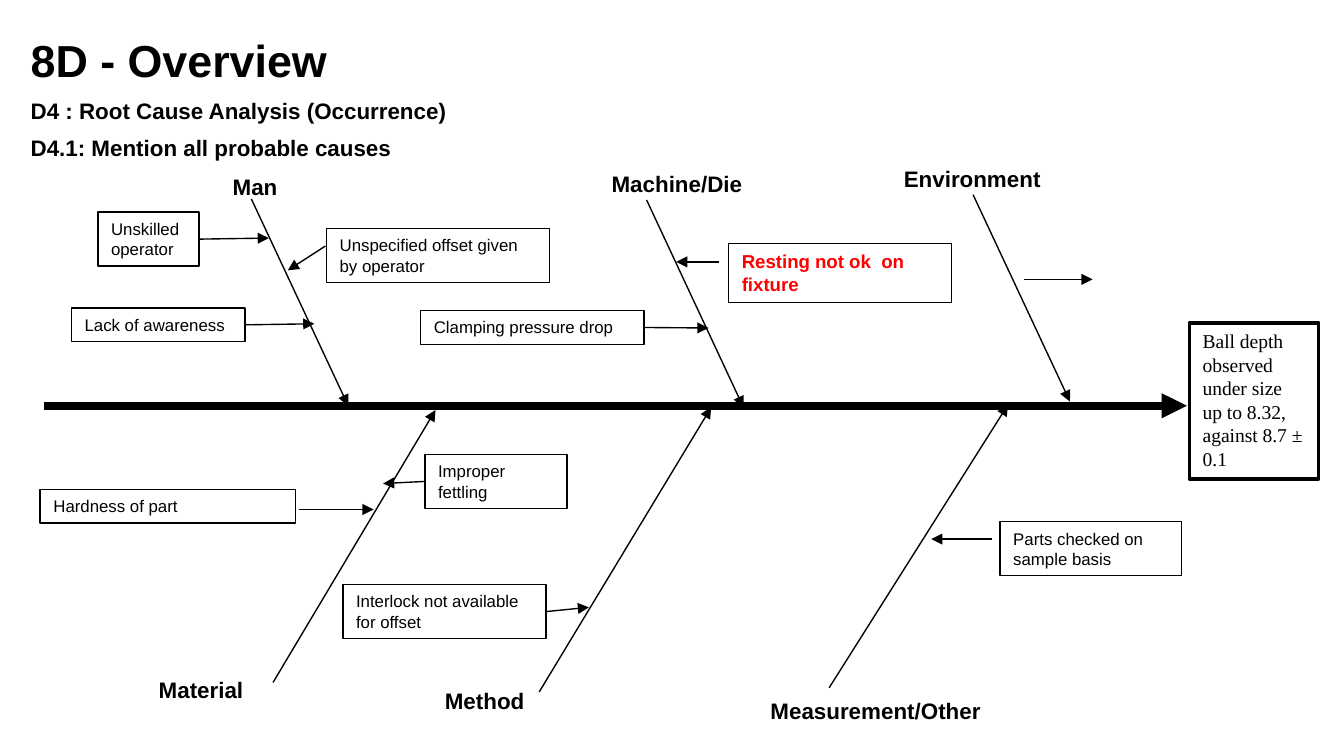
from dataclasses import dataclass

from lxml import etree
from pptx import Presentation
from pptx.dml.color import RGBColor
from pptx.enum.shapes import MSO_CONNECTOR as Connector, MSO_SHAPE as Shape
from pptx.enum.text import MSO_ANCHOR as Anchor, MSO_AUTO_SIZE as AutoSize, PP_ALIGN as Align
from pptx.oxml.ns import qn
from pptx.util import Cm, Pt


@dataclass(frozen=True)
class Theme:
    ink: RGBColor = RGBColor(0, 0, 0)
    paper: RGBColor = RGBColor(255, 255, 255)
    alert: RGBColor = RGBColor(255, 0, 0)
    sans: str = "Arial"
    serif: str = "Times New Roman"
    title: Pt = Pt(24)
    heading: Pt = Pt(12)
    effect: Pt = Pt(10.5)
    alert_size: Pt = Pt(10)
    cause: Pt = Pt(9)
    thin: Pt = Pt(0.75)
    frame: Pt = Pt(2)
    spine: Pt = Pt(4.5)


theme = Theme()
RIGHT, LEFT = 3, 1

presentation = Presentation()
presentation.slide_width, presentation.slide_height = Cm(25.4), Cm(14.29)
slide = presentation.slides.add_slide(presentation.slide_layouts[6])


def add_text(box, lines, size, bold=False, color=theme.ink, font=theme.sans, border=None):
    place = [Cm(length) for length in box]
    if border:
        shape = slide.shapes.add_shape(Shape.RECTANGLE, *place)
        shape.shadow.inherit = False
        shape.fill.background()
        shape.line.color.rgb = theme.ink
        shape.line.width = border
        shape.text_frame.auto_size = AutoSize.SHAPE_TO_FIT_TEXT
    else:
        shape = slide.shapes.add_textbox(*place)
    frame = shape.text_frame
    frame.word_wrap = True
    frame.vertical_anchor = Anchor.TOP
    frame.text = "\n".join(lines)
    for paragraph in frame.paragraphs:
        paragraph.alignment = Align.LEFT
        paragraph.font.name = font
        paragraph.font.size = size
        paragraph.font.bold = bold
        paragraph.font.color.rgb = color
    return shape


def add_arrow(start, tip, width=theme.thin):
    arrow = slide.shapes.add_connector(
        Connector.STRAIGHT, *[Cm(length) for length in (*start, *tip)])
    arrow.line.color.rgb = theme.ink
    arrow.line.width = width
    etree.SubElement(arrow.line._get_or_add_ln(), qn("a:tailEnd"), type="triangle")
    etree.SubElement(arrow._element.spPr, qn("a:effectLst"))
    return arrow


title = add_text((0.33, 0.36, 24.31, 1.6), ["8D - Overview"], theme.title, bold=True)
title.text_frame.margin_top = title.text_frame.margin_bottom = Cm(0.25)

subtitle = add_text(
    (0.58, 1.78, 24.1, 1.32),
    ["D4 : Root Cause Analysis (Occurrence)", "D4.1: Mention all probable causes"],
    theme.heading, bold=True)
frame = subtitle.text_frame
frame.margin_left = frame.margin_top = frame.margin_right = frame.margin_bottom = 0
frame.vertical_anchor = Anchor.MIDDLE
frame.paragraphs[1].space_before = Pt(5)

add_arrow((0.84, 7.67), (22.43, 7.67), theme.spine)

categories = [
    ("Man ", (3.33, 3.23, 3.1), (4.75, 3.76), (6.58, 7.67)),
    ("Machine/Die", (10.8, 3.18, 3.99), (12.22, 3.78), (14.05, 7.7)),
    ("Environment", (16.38, 3.07, 3.99), (18.39, 3.68), (20.22, 7.59)),
    ("Material ", (2.31, 12.73, 3.1), (5.16, 12.9), (8.23, 7.75)),
    ("Method ", (7.67, 12.95, 3.1), (10.19, 13.08), (13.44, 7.7)),
    ("Measurement/Other", (13.97, 13.13, 5.16), (15.67, 13), (19.05, 7.65)),
]
for name, place, start, tip in categories:
    add_arrow(start, tip)
    label = add_text((*place, 0.6), [name], theme.heading, bold=True)
    label.text_frame.vertical_anchor = Anchor.MIDDLE
    label.text_frame.paragraphs[0].alignment = Align.CENTER

effect = add_text(
    (22.48, 6.1, 2.44, 2.95),
    ["Ball depth observed under size up to 8.32, against 8.7 ± 0.1"],
    theme.effect, font=theme.serif, border=theme.frame)
effect.fill.solid()
effect.fill.fore_color.rgb = theme.paper

plain = {"size": theme.cause}
alert = {"size": theme.alert_size, "bold": True, "color": theme.alert}
causes = [
    ("Unskilled operator", (1.85, 4.01, 1.91, 1.02), (3.78, 4.5), (5.08, 4.5), RIGHT, plain),
    ("Lack of awareness", (1.35, 5.82, 3.28, 0.64), (4.65, 6.12), (5.94, 6.12), RIGHT, plain),
    ("Unspecified offset given by operator", (6.17, 4.32, 4.22, 1.02),
     (6.15, 4.65), (5.44, 5.11), None, plain),
    ("Clamping pressure drop", (7.95, 5.87, 4.22, 0.64),
     (12.17, 6.2), (13.39, 6.2), RIGHT, plain),
    ("Resting not ok  on fixture", (13.77, 4.6, 4.22, 1.12),
     (13.59, 4.95), (12.78, 4.95), None, alert),
    ("Hardness of part", (0.76, 9.25, 4.83, 0.64), (5.66, 9.63), (7.06, 9.63), None, plain),
    ("Improper fettling", (8.03, 8.59, 2.69, 1.02), (8.03, 9.14), (7.24, 9.14), LEFT, plain),
    ("Interlock not available for offset", (6.48, 11.05, 3.84, 1.02),
     (10.29, 11.56), (11.13, 11.48), RIGHT, plain),
    ("Parts checked on sample basis", (18.9, 9.86, 3.43, 1.02),
     (18.75, 10.19), (17.6, 10.19), None, plain),
]
for text, box, start, tip, side, style in causes:
    cause = add_text(box, [text], border=theme.thin, **style)
    arrow = add_arrow(start, tip)
    if side is not None:
        arrow.begin_connect(cause, side)

add_arrow((19.35, 5.28), (20.65, 5.28))

presentation.save("out.pptx")
